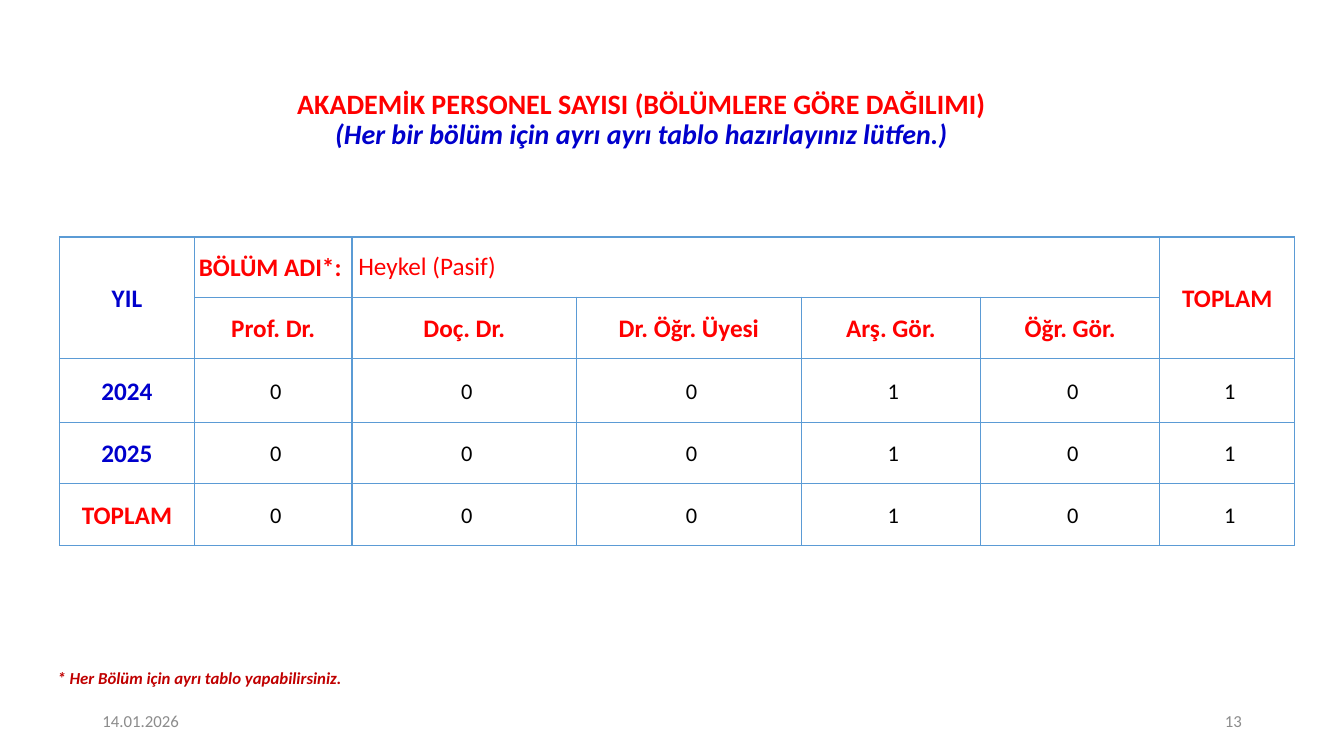
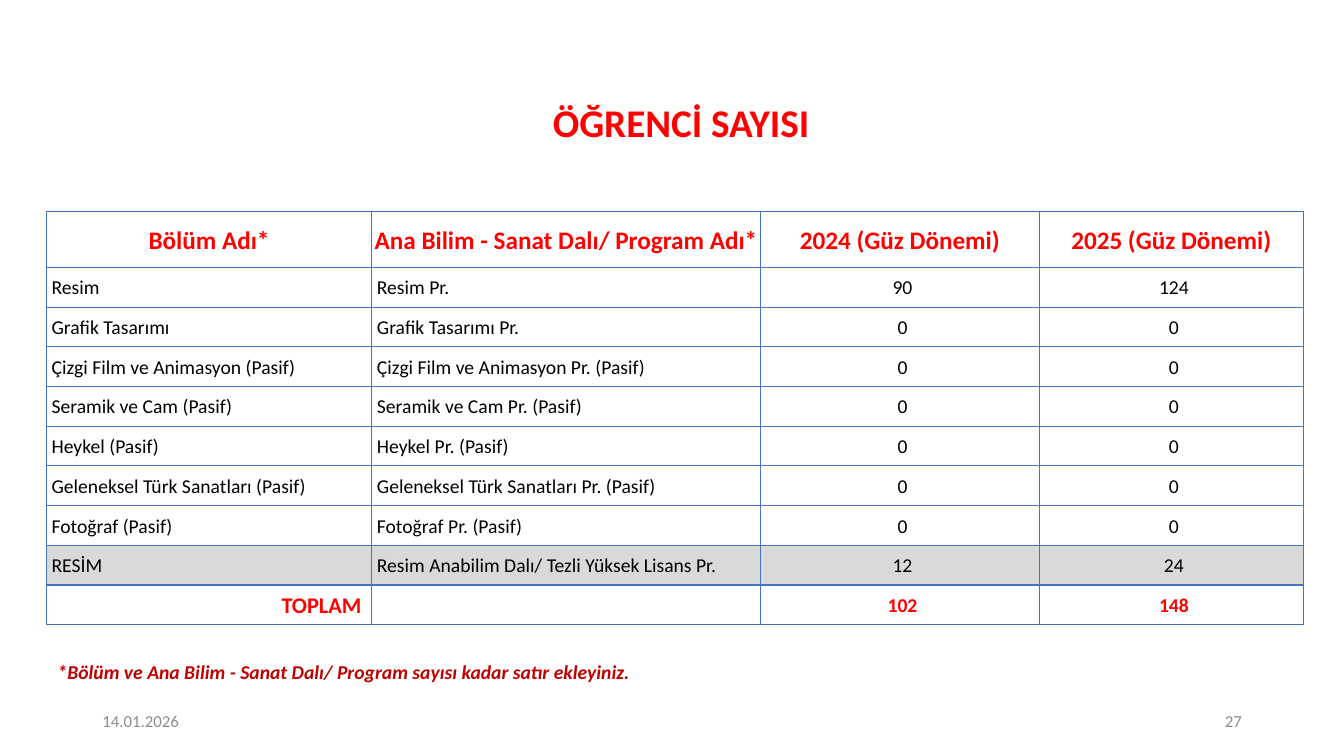
from lxml.etree import SubElement
from pptx import Presentation
from pptx.dml.color import RGBColor
from pptx.enum.text import MSO_ANCHOR as Anchor, MSO_AUTO_SIZE as AutoSize, PP_ALIGN as Align
from pptx.oxml.ns import qn
from pptx.util import Cm, Pt

FONT = "Calibri"
COLORS = {
    "red": "FF0000", "blue": "0000CC", "dark_red": "C00000", "black": "000000",
    "gray": "8C8C8C", "light_gray": "D9D9D9",
    "staff_border": "5B9BD5", "student_border": "4472C4",
}
DATE = "14.01.2026"
TITLE_ONLY = 5
CELL_INDENT = 0.13

STAFF_TITLES = ["Prof. Dr.", "Doç. Dr.", "Dr. Öğr. Üyesi", "Arş. Gör.", "Öğr. Gör."]
STAFF_ROWS = [
    ("2024", "blue", [0, 0, 0, 1, 0, 1]),
    ("2025", "blue", [0, 0, 0, 1, 0, 1]),
    ("TOPLAM", "red", [0, 0, 0, 1, 0, 1]),
]
STUDENT_HEADERS = ["Bölüm Adı*", "Ana Bilim - Sanat Dalı/ Program Adı*",
                   "2024 (Güz Dönemi)", "2025 (Güz Dönemi)"]
STUDENT_ROWS = [
    ("Resim", "Resim Pr.", 90, 124),
    ("Grafik Tasarımı", "Grafik Tasarımı Pr.", 0, 0),
    ("Çizgi Film ve Animasyon (Pasif)", "Çizgi Film ve Animasyon Pr. (Pasif)", 0, 0),
    ("Seramik ve Cam (Pasif)", "Seramik ve Cam Pr. (Pasif)", 0, 0),
    ("Heykel (Pasif)", "Heykel Pr. (Pasif)", 0, 0),
    ("Geleneksel Türk Sanatları (Pasif)", "Geleneksel Türk Sanatları Pr. (Pasif)", 0, 0),
    ("Fotoğraf (Pasif)", "Fotoğraf Pr. (Pasif)", 0, 0),
    ("RESİM", "Resim Anabilim Dalı/ Tezli Yüksek Lisans Pr.", 12, 24),
]
STUDENT_TOTALS = [102, 148]


def add_run(paragraph, text, size, color, bold=False, italic=False):
    run = paragraph.add_run()
    run.text = text
    font = run.font
    font.name, font.size, font.bold, font.italic = FONT, Pt(size), bold, italic
    font.color.rgb = RGBColor.from_string(COLORS[color])


def add_text(slide, text, left, top, width, height, align=Align.LEFT,
             anchor=Anchor.TOP, **text_format):
    box = slide.shapes.add_textbox(Cm(left), Cm(top), Cm(width), Cm(height))
    frame = box.text_frame
    frame.word_wrap = True
    frame.vertical_anchor = anchor
    paragraph = frame.paragraphs[0]
    paragraph.alignment = align
    add_run(paragraph, text, **text_format)


def add_slide(presentation, number, title_lines, title_box, size):
    """Add a slide with its title, date and number; each title line is (text, format)."""
    slide = presentation.slides.add_slide(presentation.slide_layouts[TITLE_ONLY])
    title = slide.shapes.title
    title.left, title.top, title.width, title.height = map(Cm, title_box)
    frame = title.text_frame
    frame.auto_size = AutoSize.NONE
    frame.word_wrap = True
    frame.vertical_anchor = Anchor.MIDDLE
    paragraph = frame.paragraphs[0]
    paragraph.alignment = Align.CENTER
    paragraph.line_spacing = 0.9
    for index, (text, text_format) in enumerate(title_lines):
        if index:
            paragraph.add_line_break()
            # The break keeps the size of the title text
            SubElement(paragraph._p[-1], qn("a:rPr"), sz=str(size * 100))
        add_run(paragraph, text, size, bold=True, **text_format)

    # Footer
    footer = dict(top=17.65, width=7.62, height=1.02, anchor=Anchor.MIDDLE,
                  size=12, color="gray")
    add_text(slide, DATE, left=2.33, **footer)
    add_text(slide, str(number), left=23.93, align=Align.RIGHT, **footer)
    return slide


def add_footnote(slide, text, top, size):
    add_text(slide, text, 1.2, top, 21.54, 0.8, size=size, color="dark_red",
             bold=True, italic=True)


def set_borders(cell, color):
    properties = cell._tc.get_or_add_tcPr()
    for side in ("lnL", "lnR", "lnT", "lnB"):
        line = SubElement(properties, qn(f"a:{side}"), w=str(Pt(1)))
        fill = SubElement(line, qn("a:solidFill"))
        SubElement(fill, qn("a:srgbClr"), val=COLORS[color])


def add_table(slide, left, top, widths, heights, border):
    frame = slide.shapes.add_table(len(heights), len(widths), Cm(left), Cm(top),
                                   Cm(sum(widths)), Cm(sum(heights)))
    table = frame.table
    table.first_row = table.horz_banding = False
    for column, width in zip(table.columns, widths):
        column.width = Cm(width)
    for row, height in zip(table.rows, heights):
        row.height = Cm(height)
    for cell in table.iter_cells():
        set_borders(cell, border)
        cell.fill.background()
        cell.vertical_anchor = Anchor.MIDDLE
        cell.margin_left = cell.margin_right = cell.margin_top = cell.margin_bottom = 0
    return table


def fill_cell(cell, text, align=Align.CENTER, indent=0, right_indent=0,
              spacing=1.07, **text_format):
    cell.margin_left, cell.margin_right = Cm(indent), Cm(right_indent)
    paragraph = cell.text_frame.paragraphs[0]
    paragraph.alignment = align
    paragraph.line_spacing = spacing
    add_run(paragraph, str(text), **text_format)


def build_staff_slide(presentation):
    slide = add_slide(presentation, 13, [
        ("AKADEMİK PERSONEL SAYISI (BÖLÜMLERE GÖRE DAĞILIMI)", dict(color="red")),
        ("(Her bir bölüm için ayrı ayrı tablo hazırlayınız lütfen.)",
         dict(color="blue", italic=True)),
    ], title_box=(1.8, 1.78, 28.73, 2.51), size=20)
    table = add_table(slide, 1.5, 5.97, [3.4, 3.97, 5.66, 5.66, 4.52, 4.52, 3.4],
                      [1.52, 1.55, 1.6, 1.55, 1.55], "staff_border")

    # Two header rows
    table.cell(0, 0).merge(table.cell(1, 0))
    table.cell(0, 2).merge(table.cell(0, 5))
    table.cell(0, 6).merge(table.cell(1, 6))
    header = dict(size=18, color="red", bold=True)
    fill_cell(table.cell(0, 0), "YIL", size=18, color="blue", bold=True)
    fill_cell(table.cell(0, 1), "BÖLÜM ADI*:", right_indent=0.15, **header)
    fill_cell(table.cell(0, 2), "Heykel (Pasif)", align=Align.LEFT, indent=0.16,
              spacing=1.0, size=18, color="red")
    fill_cell(table.cell(0, 6), "TOPLAM", **header)
    for column, text in enumerate(STAFF_TITLES, 1):
        fill_cell(table.cell(1, column), text, **header)

    # Counts by year
    for row, (label, color, counts) in enumerate(STAFF_ROWS, 2):
        fill_cell(table.cell(row, 0), label, size=18, color=color, bold=True)
        for column, count in enumerate(counts, 1):
            fill_cell(table.cell(row, column), count, indent=CELL_INDENT,
                      size=16, color="black")
    add_footnote(slide, "* Her Bölüm için ayrı tablo yapabilirsiniz.", 16.69, 12)


def build_student_slide(presentation):
    slide = add_slide(presentation, 27, [("ÖĞRENCİ SAYISI", dict(color="red"))],
                      title_box=(1.85, 2.44, 30.63, 1.42), size=28)
    heights = [1.42] + [1] * (len(STUDENT_ROWS) + 1)
    table = add_table(slide, 1.17, 5.32, [8.2, 9.8, 7.02, 6.66], heights,
                      "student_border")
    for column, text in enumerate(STUDENT_HEADERS):
        fill_cell(table.cell(0, column), text, size=18, color="red", bold=True)

    # Programs
    for row, values in enumerate(STUDENT_ROWS, 1):
        for column, value in enumerate(values):
            align = Align.LEFT if column < 2 else Align.CENTER
            fill_cell(table.cell(row, column), value, align=align,
                      indent=CELL_INDENT, size=14, color="black")

    # Shaded graduate row
    graduate_row = len(STUDENT_ROWS)
    for column in range(len(STUDENT_HEADERS)):
        fill = table.cell(graduate_row, column).fill
        fill.solid()
        fill.fore_color.rgb = RGBColor.from_string(COLORS["light_gray"])

    # Totals
    total_row = graduate_row + 1
    fill_cell(table.cell(total_row, 0), "TOPLAM", align=Align.RIGHT,
              right_indent=0.26, size=16, color="red", bold=True)
    for column, total in enumerate(STUDENT_TOTALS, 2):
        fill_cell(table.cell(total_row, column), total, indent=CELL_INDENT,
                  size=14, color="red", bold=True)
    add_footnote(slide, "*Bölüm ve Ana Bilim - Sanat Dalı/ Program sayısı kadar satır ekleyiniz.",
                 16.51, 14)


def main():
    presentation = Presentation()
    presentation.slide_width, presentation.slide_height = Cm(33.87), Cm(19.05)
    build_staff_slide(presentation)
    build_student_slide(presentation)
    presentation.save("out.pptx")


if __name__ == "__main__":
    main()
